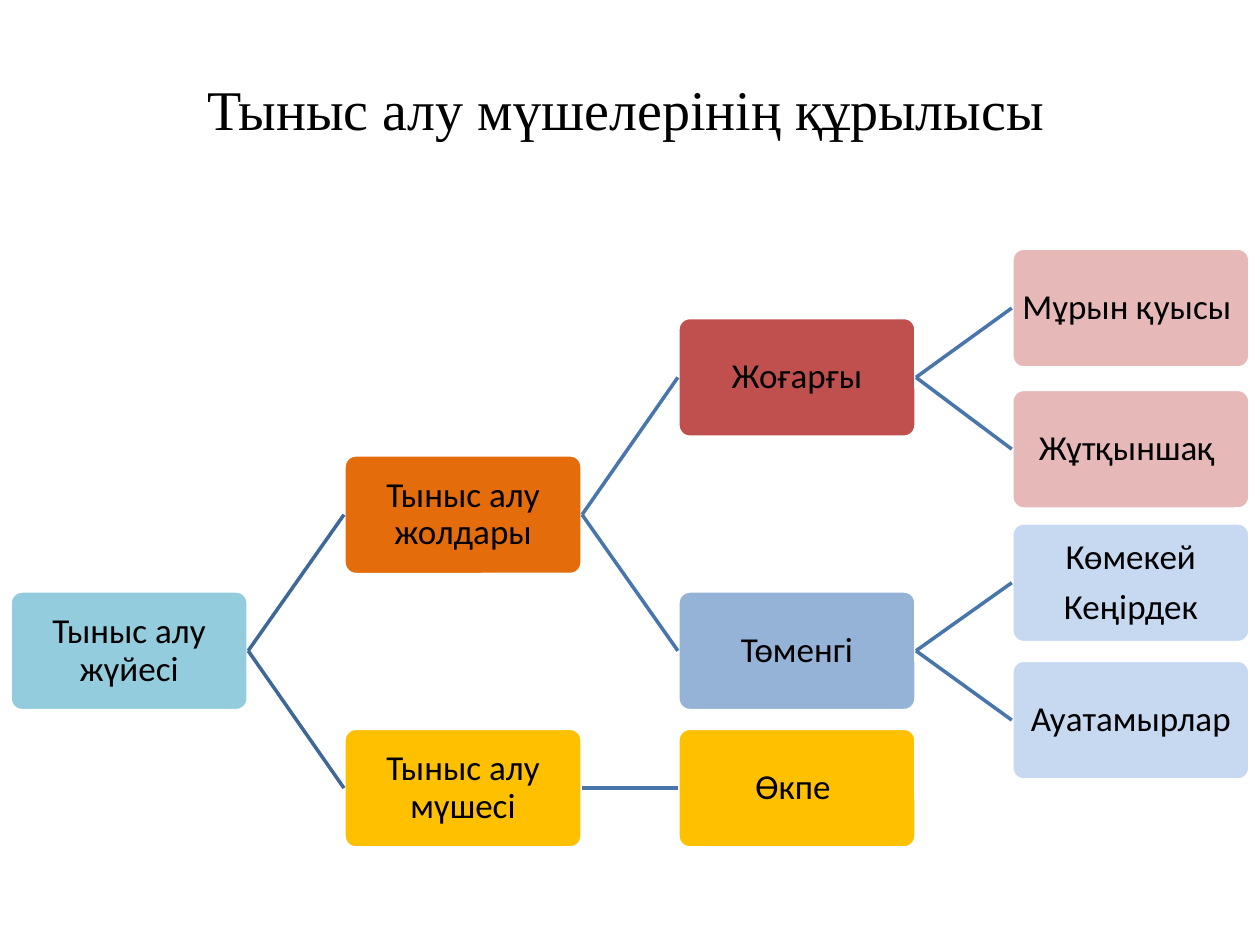
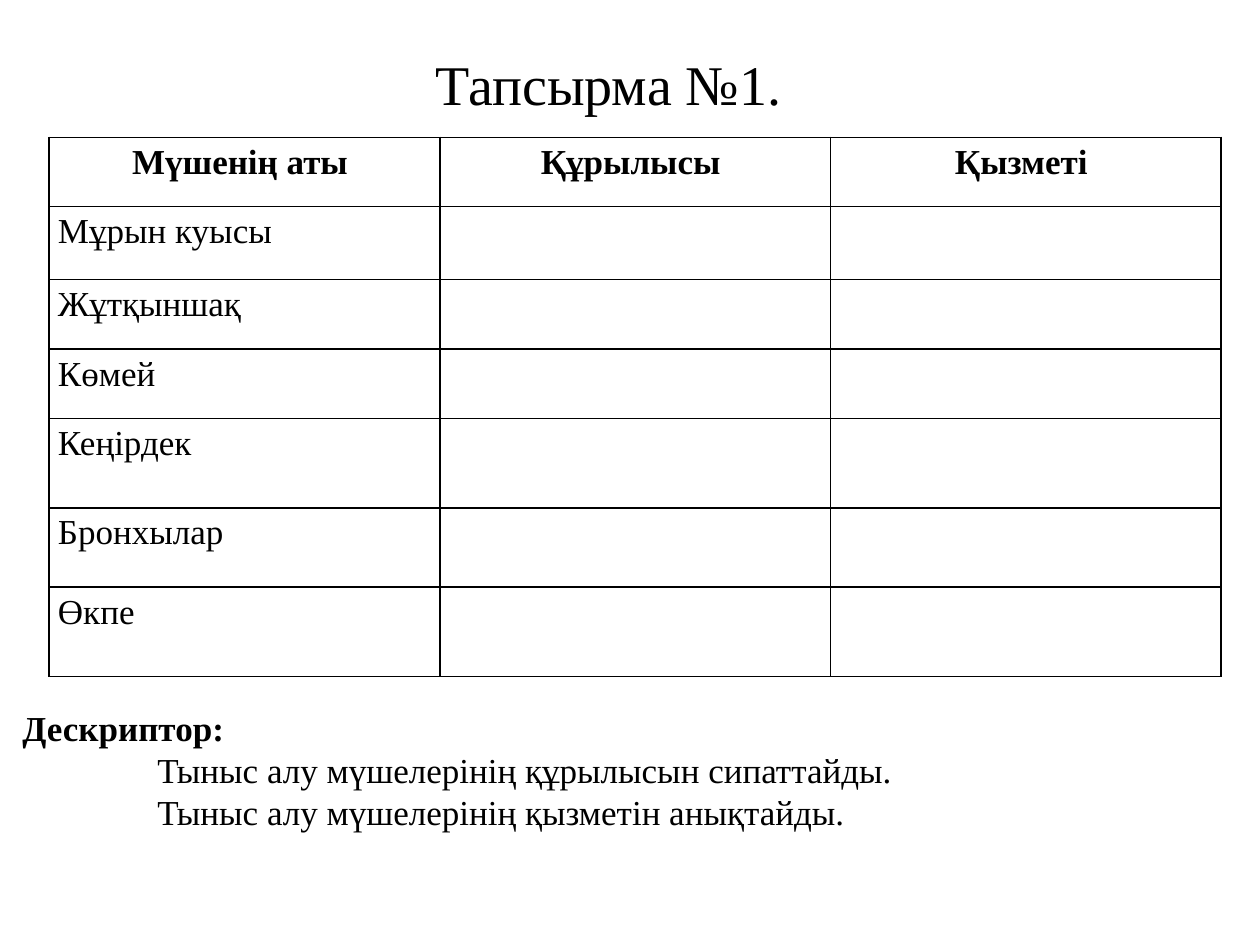
"""Build two slides on the respiratory organs: a structure tree and a task table."""
from dataclasses import dataclass

from lxml import etree
from pptx import Presentation
from pptx.dml.color import RGBColor
from pptx.enum.shapes import MSO_CONNECTOR, MSO_SHAPE
from pptx.enum.text import MSO_ANCHOR, PP_ALIGN
from pptx.oxml.ns import qn
from pptx.util import Pt

STRAIGHT = MSO_CONNECTOR.STRAIGHT
ROUNDED = MSO_SHAPE.ROUNDED_RECTANGLE
MIDDLE, TOP = MSO_ANCHOR.MIDDLE, MSO_ANCHOR.TOP
CENTER, LEFT = PP_ALIGN.CENTER, PP_ALIGN.LEFT
LEFT_SIDE, RIGHT_SIDE = 1, 3

EMU_PER_PX = 9144
SLIDE_WIDTH, SLIDE_HEIGHT = 1000, 750
SERIF, SANS = "Times New Roman", "Calibri"
TITLE_SIZE, BODY_SIZE = 32, 20
LINE_WIDTH = 2

COLORS = {
    "text": "000000",
    "outline": "FFFFFF",
    "root_link": "3F6797",
    "link": "4875AC",
    "system": "93CDDD",
    "airways": "E46C0A",
    "upper": "C0504D",
    "upper_part": "E6B9B8",
    "lower": "95B3D7",
    "lower_part": "C6D9F1",
    "lungs": "FFC000",
}

TREE_LEFT, LEVEL_STEP = 8, 265
BOX_WIDTH, BOX_HEIGHT = 189, 95

HEADERS = ("Мүшенің аты ", "Құрылысы ", "Қызметі ")
ORGANS = ("Мұрын куысы", "Жұтқыншақ", "Көмей", "Кеңірдек", "Бронхылар", "Өкпе")
ROW_HEIGHTS = (55, 58, 55, 55, 71, 63, 71)
COLUMN_WIDTH = 310
DESCRIPTORS = (
    "Дескриптор:",
    "Тыныс алу мүшелерінің құрылысын сипаттайды.",
    "Тыныс алу мүшелерінің қызметін анықтайды.",
)
DESCRIPTOR_INDENT = 107


@dataclass(frozen=True)
class Node:
    """A box of the tree with the boxes that branch from it."""

    label: str
    fill: str
    top: int
    children: tuple = ()


TREE = Node("Тыныс алу жүйесі", "system", 469, (
    Node("Тыныс алу жолдары", "airways", 361, (
        Node("Жоғарғы", "upper", 252, (
            Node("Мұрын қуысы ", "upper_part", 197),
            Node("Жұтқыншақ ", "upper_part", 309),
        )),
        Node("Төменгі", "lower", 469, (
            Node("Көмекей\nКеңірдек", "lower_part", 415),
            Node("Ауатамырлар", "lower_part", 524),
        )),
    )),
    Node("Тыныс алу мүшесі", "lungs", 578, (
        Node("Өкпе ", "lungs", 578),
    )),
))


def px(length: int) -> int:
    """Turn pixels into EMU."""
    return length * EMU_PER_PX


def color(name: str) -> RGBColor:
    """Look up a named colour."""
    return RGBColor.from_string(COLORS[name])


def style_paragraph(paragraph, font_name: str, size: int, alignment=LEFT, bold: bool = False) -> None:
    """Align a paragraph and format its runs."""
    paragraph.alignment = alignment
    for run in paragraph.runs:
        run.font.name = font_name
        run.font.size = Pt(size)
        run.font.bold = bold
        run.font.color.rgb = color("text")


def add_text(slide, text: str, left: int, top: int, width: int, height: int):
    """Add a wrapping, vertically centred text box and return its frame."""
    frame = slide.shapes.add_textbox(px(left), px(top), px(width), px(height)).text_frame
    frame.word_wrap = True
    frame.vertical_anchor = MIDDLE
    frame.text = text
    return frame


def add_title(slide, text: str, left: int, top: int, height: int) -> None:
    """Add a slide title."""
    frame = add_text(slide, text, left, top, 900, height)
    style_paragraph(frame.paragraphs[0], SERIF, TITLE_SIZE, CENTER)


def add_box(slide, node: Node, level: int):
    """Draw the box of one tree node."""
    left = TREE_LEFT + level * LEVEL_STEP
    box = slide.shapes.add_shape(ROUNDED, px(left), px(node.top), px(BOX_WIDTH), px(BOX_HEIGHT))
    box.adjustments[0] = 0.1
    box.shadow.inherit = False
    box.fill.solid()
    box.fill.fore_color.rgb = color(node.fill)
    box.line.color.rgb = color("outline")
    box.line.width = Pt(LINE_WIDTH)
    frame = box.text_frame
    frame.word_wrap = True
    frame.vertical_anchor = MIDDLE
    frame.margin_left = frame.margin_right = frame.margin_top = frame.margin_bottom = px(1)
    frame.text = node.label
    for paragraph in frame.paragraphs:
        style_paragraph(paragraph, SANS, BODY_SIZE, CENTER)
        paragraph.line_spacing = 0.9
        paragraph.space_after = Pt(7)
    return box


def add_link(slide, parent, child, color_name: str) -> None:
    """Join the right side of a parent box to the left side of its child."""
    link = slide.shapes.add_connector(STRAIGHT, 0, 0, 0, 0)
    link.begin_connect(parent, RIGHT_SIDE)
    link.end_connect(child, LEFT_SIDE)
    link.line.color.rgb = color(color_name)
    link.line.width = Pt(LINE_WIDTH)
    etree.SubElement(link.element.spPr, qn("a:effectLst"))


def add_branch(slide, node: Node, level: int = 0):
    """Draw a node and everything that branches from it."""
    box = add_box(slide, node, level)
    for child in node.children:
        child_box = add_branch(slide, child, level + 1)
        add_link(slide, box, child_box, "link" if level else "root_link")
    return box


def add_borders(cell) -> None:
    """Give a cell thin borders on its four sides."""
    properties = cell._tc.get_or_add_tcPr()
    for position, side in enumerate(("a:lnL", "a:lnR", "a:lnT", "a:lnB")):
        border = etree.Element(qn(side), w=str(Pt(1)))
        fill = etree.SubElement(border, qn("a:solidFill"))
        etree.SubElement(fill, qn("a:srgbClr"), val=COLORS["text"])
        properties.insert(position, border)


def add_organ_table(slide) -> None:
    """Add the table of organs to be filled in."""
    rows = [HEADERS] + [(organ, "", "") for organ in ORGANS]
    table = slide.shapes.add_table(
        len(rows), len(HEADERS), px(39), px(109),
        px(COLUMN_WIDTH * len(HEADERS)), px(sum(ROW_HEIGHTS)),
    ).table
    table.first_row = table.horz_banding = False
    for column in table.columns:
        column.width = px(COLUMN_WIDTH)
    for row_index, texts in enumerate(rows):
        table.rows[row_index].height = px(ROW_HEIGHTS[row_index])
        is_header = row_index == 0
        for column_index, text in enumerate(texts):
            cell = table.cell(row_index, column_index)
            cell.fill.background()
            add_borders(cell)
            cell.vertical_anchor = TOP
            cell.margin_left = cell.margin_right = px(7)
            cell.margin_top = cell.margin_bottom = 0
            cell.text_frame.text = text
            paragraph = cell.text_frame.paragraphs[0]
            paragraph.line_spacing = 1.15
            style_paragraph(paragraph, SERIF, BODY_SIZE, CENTER if is_header else LEFT, is_header)


def add_descriptors(slide) -> None:
    """Add the heading and the indented descriptors below the table."""
    frame = add_text(slide, "\n".join(DESCRIPTORS), 8, 555, 984, 111)
    for index, paragraph in enumerate(frame.paragraphs):
        style_paragraph(paragraph, SERIF, BODY_SIZE, bold=index == 0)
        if index:
            paragraph._p.get_or_add_pPr().set("marL", str(px(DESCRIPTOR_INDENT)))


def main() -> None:
    """Build and save the presentation."""
    presentation = Presentation()
    presentation.slide_width = px(SLIDE_WIDTH)
    presentation.slide_height = px(SLIDE_HEIGHT)
    blank_layout = presentation.slide_layouts[6]

    structure_slide = presentation.slides.add_slide(blank_layout)
    add_title(structure_slide, "Тыныс алу мүшелерінің құрылысы", 47, 47, 78)
    add_branch(structure_slide, TREE)

    task_slide = presentation.slides.add_slide(blank_layout)
    add_title(task_slide, "Тапсырма №1.", 33, 30, 72)
    add_organ_table(task_slide)
    add_descriptors(task_slide)

    presentation.save("out.pptx")


if __name__ == "__main__":
    main()
